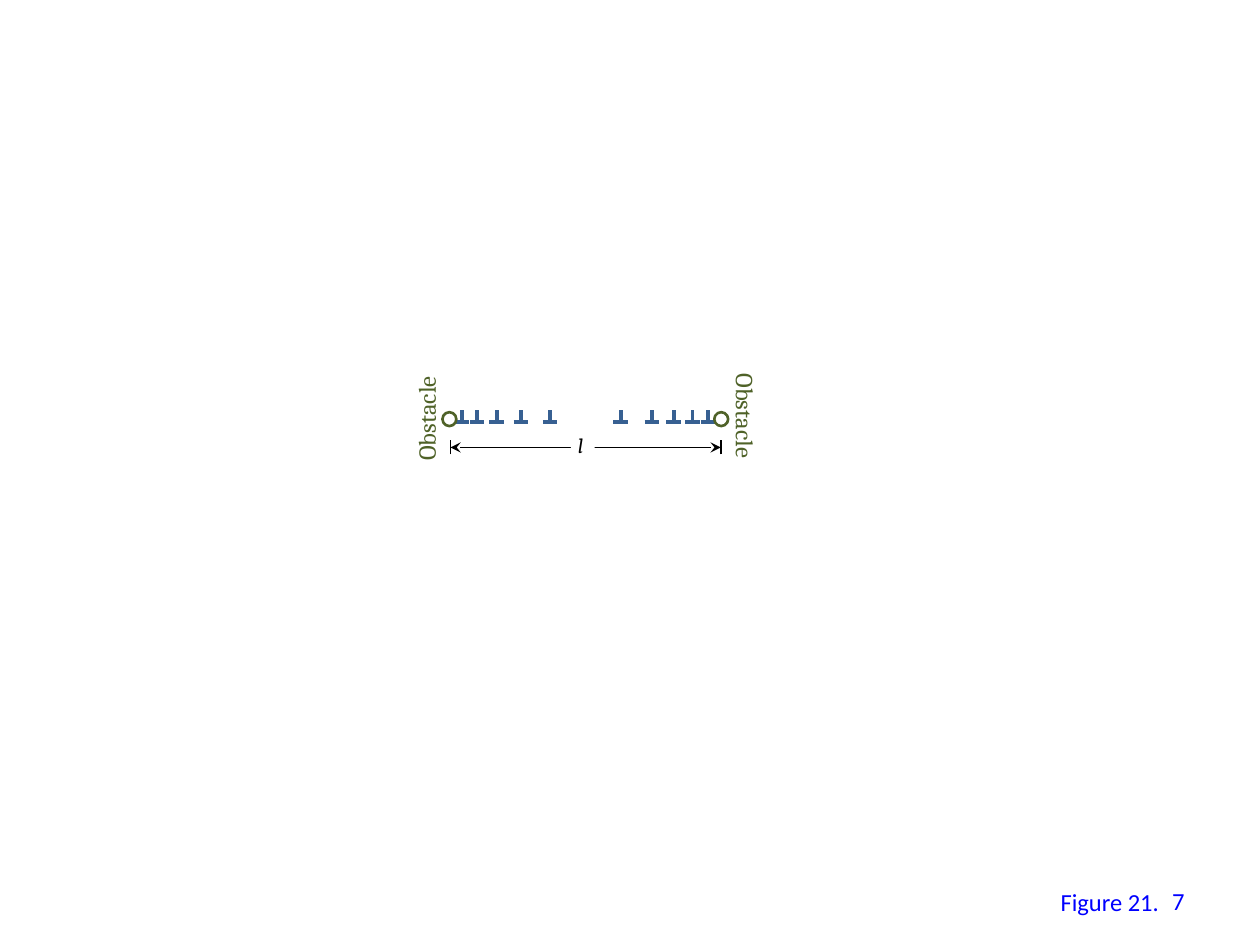
from lxml import etree
from pptx import Presentation
from pptx.dml.color import RGBColor
from pptx.enum.shapes import MSO_CONNECTOR, MSO_SHAPE
from pptx.enum.text import MSO_ANCHOR, MSO_AUTO_SIZE, PP_ALIGN
from pptx.oxml.ns import qn
from pptx.util import Cm, Pt

STRAIGHT = MSO_CONNECTOR.STRAIGHT
OVAL, RECT = MSO_SHAPE.OVAL, MSO_SHAPE.RECTANGLE
LEFT, RIGHT = PP_ALIGN.LEFT, PP_ALIGN.RIGHT
TOP, MIDDLE = MSO_ANCHOR.TOP, MSO_ANCHOR.MIDDLE
FIT = MSO_AUTO_SIZE.SHAPE_TO_FIT_TEXT

BLUE = RGBColor(0x37, 0x60, 0x92)
GREEN = RGBColor(0x4F, 0x62, 0x28)
CAPTION = RGBColor(0x00, 0x00, 0xFF)
BLACK = RGBColor(0x00, 0x00, 0x00)
WHITE = RGBColor(0xFF, 0xFF, 0xFF)

# All lengths are in centimetres.
DISLOCATIONS = [9.31, 9.62, 10.01, 10.5, 11.09, 12.51, 13.14, 13.58, 13.96, 14.27]
SLIP_Y, FOOT_HALF, STEM = 8.51, 0.145, 0.25
OBSTACLES = [9.06, 14.54]
OBSTACLE_Y, DIAMETER = 8.45, 0.28
SPAN = (9.08, 14.53)
SPAN_Y, TICK_HALF = 9.02, 0.14
SPAN_GAP = (11.51, 8.79, 0.48, 0.38)

OBSTACLE_FORMAT = dict(size=14, font="Cambria", color=GREEN)
CAPTION_FORMAT = dict(size=14, font="Calibri", color=CAPTION)
TEXTS = [
    ("Figure 21.", (21.13, 17.75, 2.51, 0.86), CAPTION_FORMAT),
    ("l", (11.4, 8.59, 0.74, 0.76),
     dict(size=12, font="Cambria", color=BLACK, italic=True)),
    ("Obstacle", (13.89, 7.98, 2.26, 0.86), dict(OBSTACLE_FORMAT, rotation=90)),
    ("Obstacle", (7.47, 7.98, 2.26, 0.86), dict(OBSTACLE_FORMAT, rotation=270)),
    ("7", (18.21, 17.65, 5.92, 1.02),
     dict(CAPTION_FORMAT, align=RIGHT, anchor=MIDDLE, wrap=True)),
]


def add_text(shapes, text, box, size, font, color, italic=False, rotation=0,
             align=LEFT, anchor=TOP, wrap=False):
    tb = shapes.add_textbox(*map(Cm, box))
    tb.rotation = rotation
    tf = tb.text_frame
    tf.word_wrap = wrap
    tf.vertical_anchor = anchor
    if not wrap:
        tf.auto_size = FIT
    p = tf.paragraphs[0]
    p.alignment = align
    r = p.add_run()
    r.text = text
    r.font.size, r.font.name, r.font.italic = Pt(size), font, italic
    r.font.color.rgb = color


def add_line(shapes, start, end, color, width, arrows=False):
    line = shapes.add_connector(STRAIGHT, *map(Cm, (*start, *end)))
    line.line.color.rgb = color
    line.line.width = Pt(width)
    if arrows:
        for tag in ("a:headEnd", "a:tailEnd"):
            etree.SubElement(line.line._get_or_add_ln(), qn(tag), type="stealth")
    etree.SubElement(line._element.spPr, qn("a:effectLst"))


def add_white_shape(shapes, kind, box, outline=None):
    sp = shapes.add_shape(kind, *map(Cm, box))
    sp.shadow.inherit = False
    sp.fill.solid()
    sp.fill.fore_color.rgb = WHITE
    if outline is None:
        sp.line.fill.background()
    else:
        sp.line.color.rgb = outline
        sp.line.width = Pt(1.5)


def add_dislocation(shapes, x):
    group = shapes.add_group_shape().shapes
    add_line(group, (x - FOOT_HALF, SLIP_Y), (x + FOOT_HALF, SLIP_Y), BLUE, 2.25)
    add_line(group, (x, SLIP_Y), (x, SLIP_Y - STEM), BLUE, 2.25)


def main():
    prs = Presentation()
    prs.slide_width, prs.slide_height = Cm(25.4), Cm(19.05)
    s = prs.slides.add_slide(prs.slide_layouts[6])

    for x in DISLOCATIONS:
        add_dislocation(s.shapes, x)
    for x in OBSTACLES:
        corner = (x - DIAMETER / 2, OBSTACLE_Y - DIAMETER / 2)
        add_white_shape(s.shapes, OVAL, (*corner, DIAMETER, DIAMETER), GREEN)

    add_line(s.shapes, (SPAN[0], SPAN_Y), (SPAN[1], SPAN_Y), BLACK, 1, arrows=True)
    for x in SPAN:
        add_line(s.shapes, (x, SPAN_Y + TICK_HALF), (x, SPAN_Y - TICK_HALF), BLACK, 1)
    add_white_shape(s.shapes, RECT, SPAN_GAP)

    for text, box, style in TEXTS:
        add_text(s.shapes, text, box, **style)
    prs.save("out.pptx")


if __name__ == "__main__":
    main()
